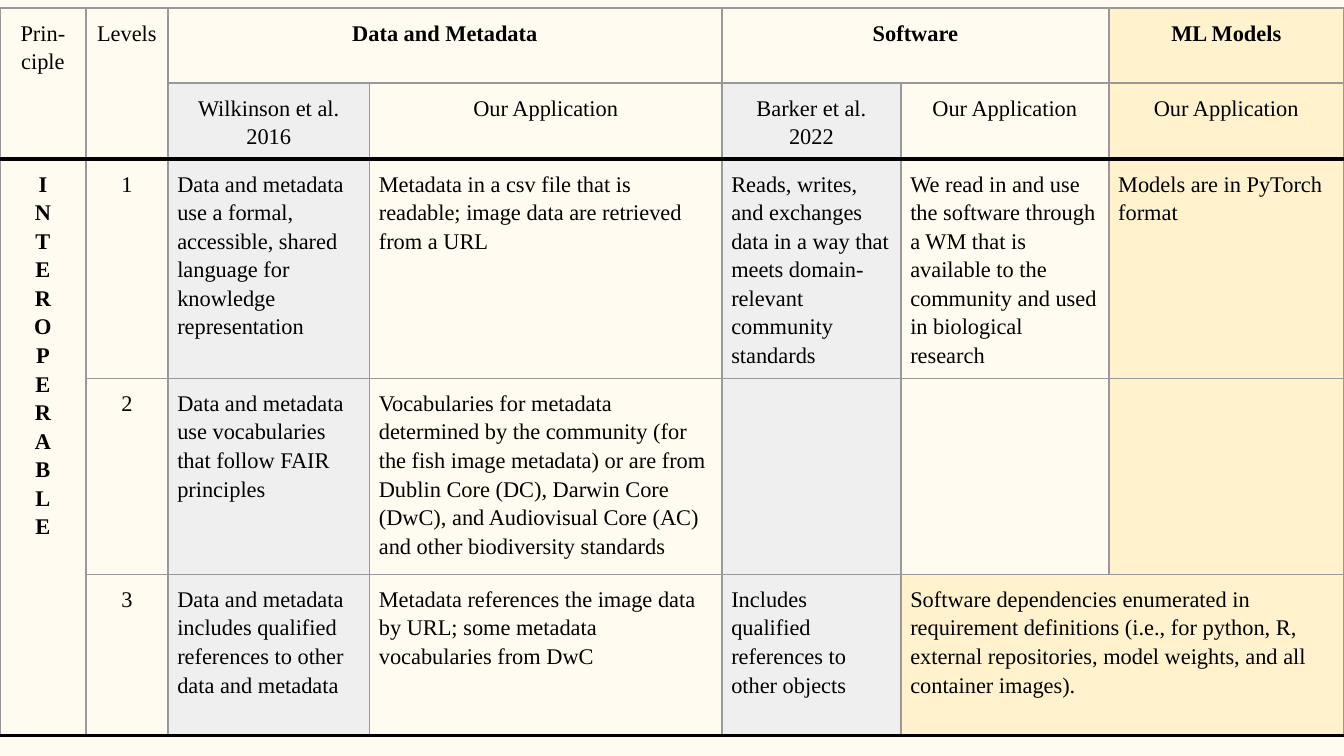
from lxml.etree import SubElement
from pptx import Presentation
from pptx.dml.color import RGBColor
from pptx.enum.text import PP_ALIGN as Align
from pptx.oxml.ns import qn
from pptx.util import Pt

CREAM = RGBColor(0xFF, 0xFB, 0xF0)
YELLOW = RGBColor(0xFF, 0xF2, 0xCC)
SHADE = RGBColor(0xEF, 0xEF, 0xEF)
GRID = RGBColor(0x99, 0x99, 0x99)
BLACK = RGBColor(0, 0, 0)

COLUMN_WIDTHS = [46, 44, 108, 188.8, 95.9, 111.4, 125.9]
ROW_HEIGHTS = [40.3, 40.3, 117.5, 105, 86.3]

ROWS = [
    ["Prin-\vciple", "Levels", "Data and Metadata", "", "Software", "", "ML Models"],
    ["", "", "Wilkinson et al. 2016", "Our Application", "Barker et al. 2022",
     "Our Application", "Our Application"],
    ["\n".join("INTEROPERABLE"), "1",
     "Data and metadata use a formal, accessible, shared language for "
     "knowledge representation",
     "Metadata in a csv file that is readable; image data are retrieved from a URL",
     "Reads, writes, and exchanges data in a way that meets domain-relevant "
     "community standards",
     "We read in and use the software through a WM that is available to the "
     "community and used in biological research",
     "Models are in PyTorch format"],
    ["", "2", "Data and metadata use vocabularies that follow FAIR principles",
     "Vocabularies for metadata determined by the community (for the fish image "
     "metadata) or are from Dublin Core (DC), Darwin Core (DwC), and Audiovisual "
     "Core (AC) and other biodiversity standards", "", "", ""],
    ["", "3",
     "Data and metadata includes qualified references to other data and metadata",
     "Metadata references the image data by URL; some metadata vocabularies from DwC",
     "Includes qualified references to other objects",
     "Software dependencies enumerated in requirement definitions (i.e., for "
     "python, R, external repositories, model weights, and all container images).",
     ""],
]
# First and last cell of each merged block, as (row, column)
MERGES = [((0, 0), (1, 0)), ((0, 1), (1, 1)), ((0, 2), (0, 3)),
          ((0, 4), (0, 5)), ((2, 0), (4, 0)), ((4, 5), (4, 6))]
BOLD_CELLS = {(0, 2), (0, 4), (0, 6), (2, 0)}
# Heavy rules, by the number of rows above them
RULES = {2: (BLACK, 2.25), 5: (BLACK, 1.5)}
THIN = (GRID, 1)


def add_border(cell, side, color, width):
    line = SubElement(cell._tc.get_or_add_tcPr(), qn(f"a:ln{side}"), w=str(Pt(width)))
    fill = SubElement(line, qn("a:solidFill"))
    SubElement(fill, qn("a:srgbClr"), val=str(color))


deck = Presentation()
deck.slide_width, deck.slide_height = Pt(720), Pt(405)
page = deck.slides.add_slide(deck.slide_layouts[6])
page.background.fill.solid()
page.background.fill.fore_color.rgb = CREAM

# Table grid
frame = page.shapes.add_table(len(ROW_HEIGHTS), len(COLUMN_WIDTHS), Pt(0), Pt(4.3),
                              Pt(sum(COLUMN_WIDTHS)), Pt(sum(ROW_HEIGHTS)))
table = frame.table
table.first_row = table.horz_banding = False
for column, width in zip(table.columns, COLUMN_WIDTHS):
    column.width = Pt(width)
for row, height in zip(table.rows, ROW_HEIGHTS):
    row.height = Pt(height)
for first, last in MERGES:
    table.cell(*first).merge(table.cell(*last))

# Cells
for r, texts in enumerate(ROWS):
    for c, text in enumerate(texts):
        cell = table.cell(r, c)
        if cell.is_spanned:
            continue
        bottom = r + (cell.span_height if cell.is_merge_origin else 1)
        add_border(cell, "L", *THIN)
        add_border(cell, "R", *THIN)
        add_border(cell, "T", *RULES.get(r, THIN))
        add_border(cell, "B", *RULES.get(bottom, THIN))

        # Shaded reference columns, yellow model cells
        if c == 6 or (r, c) == (4, 5):
            cell.fill.solid()
            cell.fill.fore_color.rgb = YELLOW
        elif r > 0 and c in (2, 4):
            cell.fill.solid()
            cell.fill.fore_color.rgb = SHADE
        else:
            cell.fill.background()

        cell.margin_left = cell.margin_right = Pt(5)
        cell.margin_top = cell.margin_bottom = Pt(5)
        cell.text_frame.text = text
        for para in cell.text_frame.paragraphs:
            para.alignment = Align.CENTER if r < 2 or c < 2 else Align.LEFT
            para.line_spacing = 1.15
            for span in para.runs:
                span.font.name = "Times New Roman"
                span.font.size = Pt(12)
                span.font.bold = (r, c) in BOLD_CELLS
                span.font.color.rgb = BLACK

deck.save("out.pptx")
